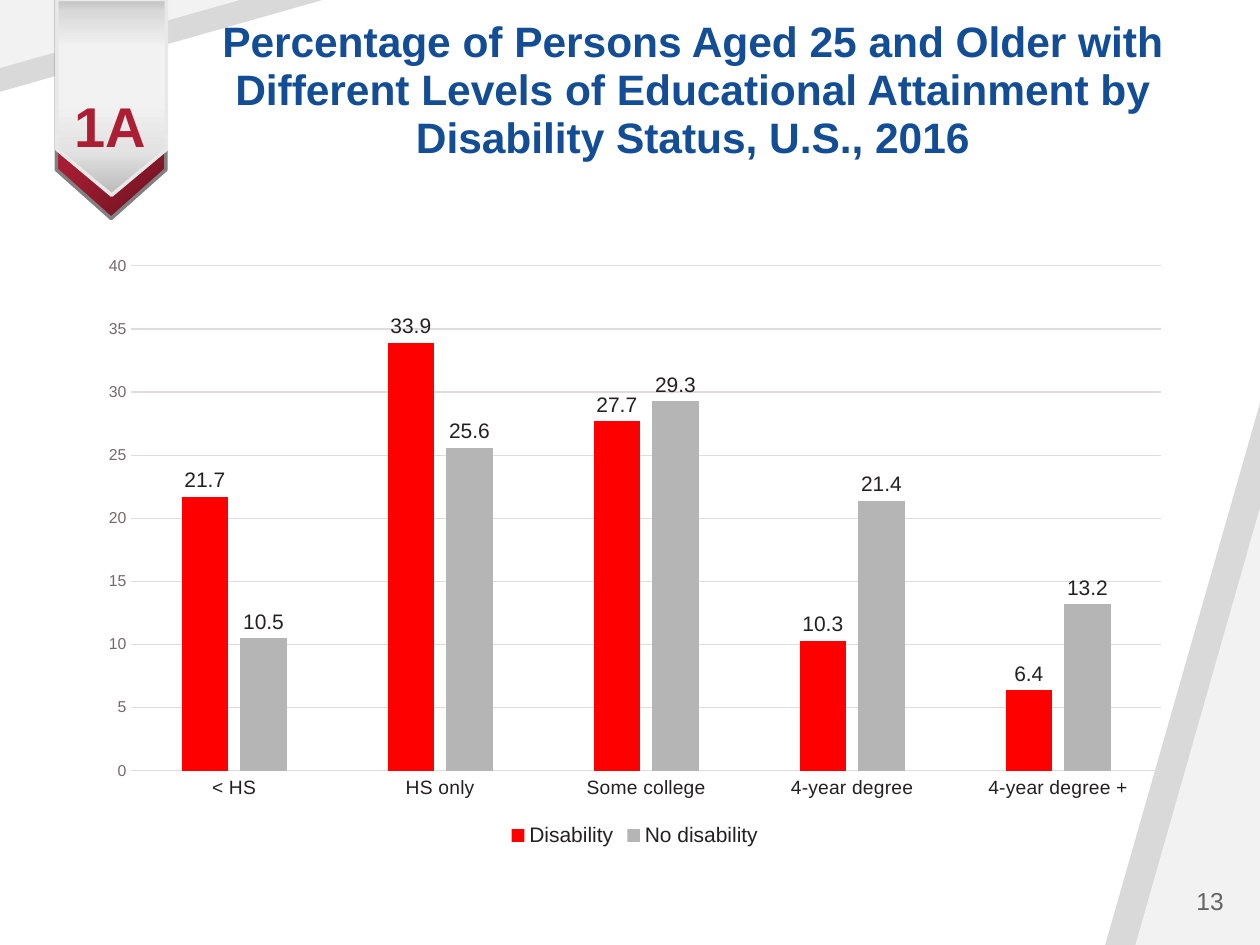
from lxml import etree
from pptx import Presentation
from pptx import util as u
from pptx.chart.data import CategoryChartData
from pptx.dml.color import RGBColor
from pptx.enum import chart as ch, shapes, text
from pptx.oxml import parse_xml
from pptx.oxml.ns import nsdecls, qn

INK, RULE = "242021", "E0DCDD"
RED = [(0, "6A1320"), (48, "A61D33"), (100, "E25A6F")]
GREY = [(0, "BFBFBF"), (6, "D9D9D9"), (25, "F2F2F2"),
        (53, "F1F1F1"), (77, "E3E3E3"), (97, "BFBFBF")]
LINEAR = '<a:lin ang="0" scaled="0"/>'
RADIAL = '<a:path path="circle"><a:fillToRect l="100000" t="100000"/></a:path>'


def color(code):
    return RGBColor.from_string(code)


def place(box):
    return [u.Cm(n) for n in box]


def style(font, size, code, bold=False):
    font.name, font.size, font.bold = "Arial", u.Pt(size), bold
    font.color.rgb = color(code)


def shape(slide, kind, box, adj, turn=0):
    item = slide.shapes.add_shape(kind, *place(box))
    item.shadow.inherit = False
    item.adjustments[0] = adj
    item.rotation = turn
    return item


def wedge(slide, box, code, turn=0):
    item = shape(slide, shapes.MSO_SHAPE.ISOSCELES_TRIANGLE, box, 1, turn)
    item.fill.solid()
    item.fill.fore_color.rgb = color(code)
    item.line.fill.background()


def ribbon(slide, box, adj, stops, path, edge):
    item = shape(slide, shapes.MSO_SHAPE.PENTAGON, box, adj, 90)
    item.line.color.rgb = color(edge)
    item.line.width = u.Pt(2)
    marks = "".join(f'<a:gs pos="{pos * 1000}"><a:srgbClr val="{code}"/></a:gs>'
                    for pos, code in stops)
    fill = parse_xml(f'<a:gradFill {nsdecls("a")} rotWithShape="1">'
                     f'<a:gsLst>{marks}</a:gsLst>{path}</a:gradFill>')
    item._element.spPr.find(qn("a:prstGeom")).addnext(fill)


def label(slide, box, words, size, code, align, bold=False, top=None, space=None):
    frame = slide.shapes.add_textbox(*place(box)).text_frame
    frame.word_wrap = True
    frame.vertical_anchor = text.MSO_ANCHOR.MIDDLE
    if top is not None:
        frame.vertical_anchor = text.MSO_ANCHOR.TOP
        frame.margin_top = u.Cm(top)
    para = frame.paragraphs[0]
    para.text = words
    para.alignment = align
    para.line_spacing = space
    style(para.font, size, code, bold)
    return para


def rule(line):
    line.color.rgb = color(RULE)
    line.width = u.Pt(0.75)


def bars(slide, box, cats, rows):
    data = CategoryChartData()
    data.categories = cats
    for name, vals, _ in rows:
        data.add_series(name, vals)
    chart = slide.shapes.add_chart(
        ch.XL_CHART_TYPE.COLUMN_CLUSTERED, *place(box), data).chart
    chart.has_title = False
    style(chart.font, 10, INK)

    # Legend
    chart.has_legend = True
    chart.legend.position = ch.XL_LEGEND_POSITION.BOTTOM
    chart.legend.include_in_layout = False
    style(chart.legend.font, 12, INK)

    # Axes
    cat, val = chart.category_axis, chart.value_axis
    for axis, size, code in ((cat, 11, INK), (val, 9, "76696C")):
        axis.major_tick_mark = axis.minor_tick_mark = ch.XL_TICK_MARK.NONE
        style(axis.tick_labels.font, size, code)
    rule(cat.format.line)
    val.format.line.fill.background()
    rule(val.major_gridlines.format.line)
    val.minimum_scale, val.maximum_scale, val.major_unit = 0, 40, 5

    # Columns and their values
    plot = chart.plots[0]
    plot.gap_width, plot.overlap = 219, -27
    plot.vary_by_categories = False
    for line, (_, _, code) in zip(plot.series, rows):
        line.invert_if_negative = False
        line.format.fill.solid()
        line.format.fill.fore_color.rgb = color(code)
        tags = line.data_labels
        tags.show_value = True
        tags.position = ch.XL_LABEL_POSITION.OUTSIDE_END
        tags.number_format, tags.number_format_is_linked = "0.0", False
        style(tags.font, 12, INK)


def main():
    deck = Presentation()
    deck.slide_width, deck.slide_height = u.Cm(25.4), u.Cm(19.05)
    slide = deck.slides.add_slide(deck.slide_layouts[6])

    # Corner wedges
    wedge(slide, (22.28, 8.13, 3.12, 10.92), "D9D9D9")
    wedge(slide, (22.89, 10.24, 2.51, 8.81), "F2F2F2")
    wedge(slide, (0, 0, 6.5, 1.85), "D9D9D9", 180)
    wedge(slide, (0, 0, 4.83, 1.37), "F2F2F2", 180)

    # Ribbon
    ribbon(slide, (0.03, 1.09, 4.42, 2.21), 0.445, RED, RADIAL, "808080")
    ribbon(slide, (0.28, 0.86, 3.94, 2.21), 0.418, GREY, LINEAR, "E8E8E8")

    # Title, page number and ribbon label
    mid, right = text.PP_ALIGN.CENTER, text.PP_ALIGN.RIGHT
    label(slide, (4.09, 0.38, 19.76, 2.92),
          "Percentage of Persons Aged 25 and Older with Different Levels of "
          "Educational Attainment by Disability Status, U.S., 2016",
          24.3, "124D95", mid, bold=True, space=0.94)
    label(slide, (21.36, 17.65, 3.56, 1.02), "13", 14, "646464", right)
    label(slide, (0.94, 1.47, 2.57, 2.24), "1A", 32, "AC1E34", mid,
          bold=True, top=0.53, space=0.9)

    # Chart
    bars(slide, (1.75, 4.93, 22.1, 12.24),
         ["< HS", "HS only", "Some college", "4-year degree", "4-year degree +"],
         [("Disability", (21.7, 33.9, 27.7, 10.3, 6.4), "FF0000"),
          ("No disability", (10.5, 25.6, 29.3, 21.4, 13.2), "B5B5B5")])

    deck.save("out.pptx")


if __name__ == "__main__":
    main()
